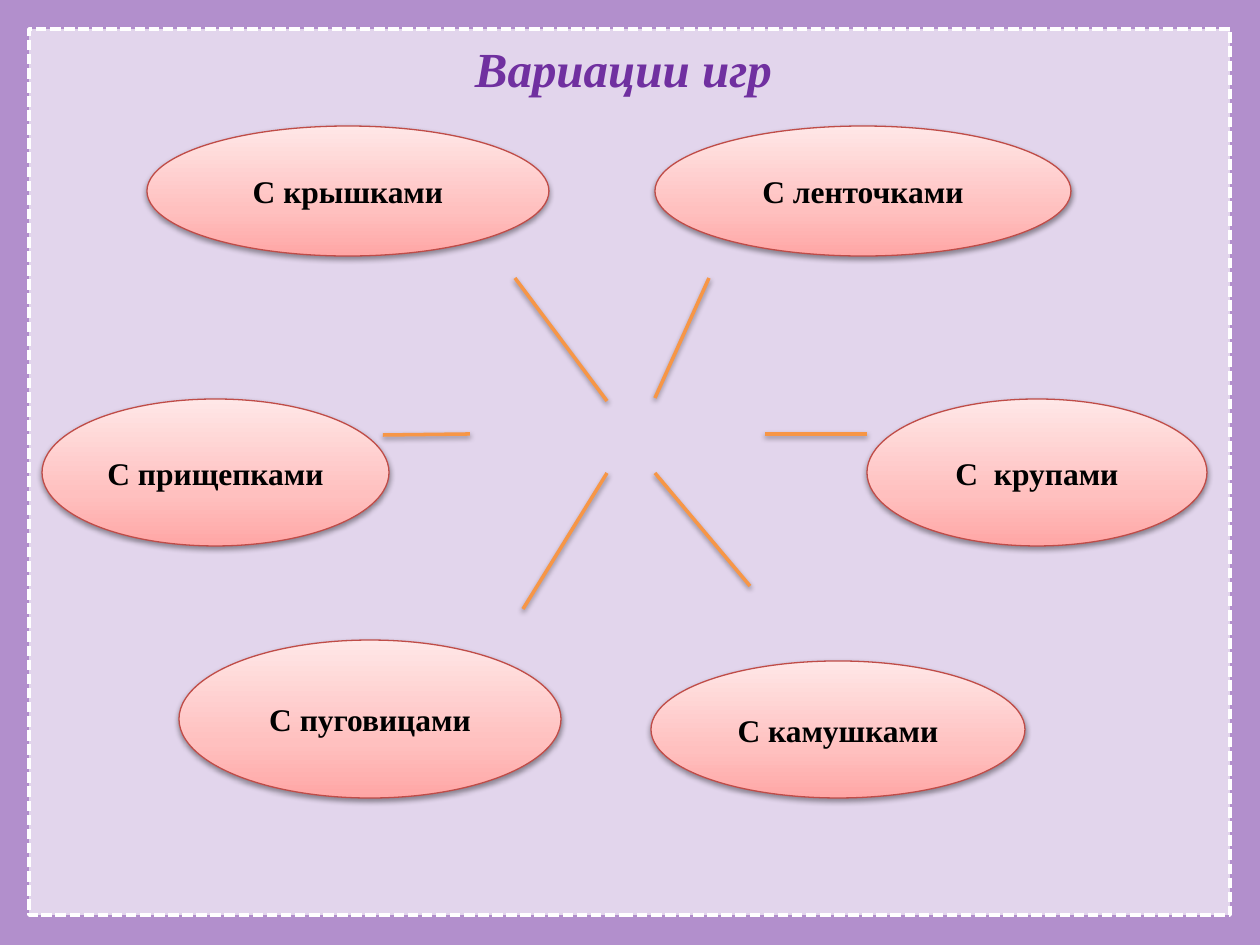
import copy

from lxml import etree
from pptx import Presentation
from pptx import util as u
from pptx.dml.color import RGBColor
from pptx.enum import dml, shapes, text
from pptx.oxml import ns

PX = 914400 / 126
FONT = "Times New Roman"

PURPLE = RGBColor(0x70, 0x30, 0xA0)
LILAC = RGBColor(0xB2, 0x8F, 0xCC)
WHITE = RGBColor(0xFF, 0xFF, 0xFF)
BLACK = RGBColor(0x00, 0x00, 0x00)
RED = RGBColor(0xBF, 0x4C, 0x48)
ORANGE = RGBColor(0xF7, 0x96, 0x46)
PINKS = (
    (0, RGBColor(0xFF, 0xA6, 0xA5)),
    (0.35, RGBColor(0xFF, 0xC0, 0xBF)),
    (1, RGBColor(0xFF, 0xE7, 0xE7)),
)

# Label, left, top, width, height
GAMES = (
    ("С крышками", 147, 126, 402, 130),
    ("С прищепками", 42, 399, 347, 147),
    ("С пуговицами", 179, 640, 382, 158),
    ("С камушками", 651, 661, 374, 137),
    ("С  крупами", 867, 399, 340, 147),
    ("С ленточками", 655, 126, 416, 130),
)

# Start x, y and end x, y
RAYS = (
    (515, 278, 607, 401),
    (655, 473, 750, 586),
    (383, 435, 470, 434),
    (765, 434, 867, 434),
    (655, 398, 709, 278),
    (607, 473, 523, 609),
)


def px(*lengths):
    return [u.Emu(round(length * PX)) for length in lengths]


def add_node(parent, tag, **attributes):
    return etree.SubElement(parent, ns.qn(tag), attributes)


def set_line(line, color, points):
    line.color.rgb = color
    line.width = u.Pt(points)


def add_shadow(shape):
    effects = add_node(shape.element.spPr, "a:effectLst")
    shadow = add_node(effects, "a:outerShdw", blurRad="39370", dist="20320",
                      dir="5400000", rotWithShape="0")
    color = add_node(shadow, "a:srgbClr", val="000000")
    add_node(color, "a:alpha", val="38000")


def set_text(shape, words, size, color, italic=False):
    frame = shape.text_frame
    frame.text = words
    frame.word_wrap = True
    frame.vertical_anchor = text.MSO_ANCHOR.MIDDLE
    para = frame.paragraphs[0]
    para.alignment = text.PP_ALIGN.CENTER
    font = para.runs[0].font
    font.name, font.size = FONT, u.Pt(size)
    font.bold, font.italic = True, italic
    font.color.rgb = color


def fill_pink(fill):
    fill.gradient()
    fill.gradient_angle = 90
    first = fill.gradient_stops[0]._gs
    first.addnext(copy.deepcopy(first))
    for stop, (position, color) in zip(fill.gradient_stops, PINKS):
        stop.position = position
        stop.color.rgb = color


def add_panel(page):
    panel = page.shapes.add_shape(shapes.MSO_SHAPE.RECTANGLE, *px(29, 29, 1201, 886))
    panel.shadow.inherit = False
    panel.fill.solid()
    panel.fill.fore_color.rgb = WHITE
    color = panel.element.spPr.find(".//" + ns.qn("a:srgbClr"))
    add_node(color, "a:alpha", val="63000")
    set_line(panel.line, WHITE, 2)
    panel.line.dash_style = dml.MSO_LINE.SQUARE_DOT
    # Send the panel behind the title
    page.shapes.element.insert(2, panel.element)


def add_title(page):
    title = page.shapes.title
    title.left, title.top, title.width, title.height = px(118, 10, 1023, 116)
    set_text(title, "Вариации игр ", 28, PURPLE, italic=True)


def add_game(page, label, *place):
    oval = page.shapes.add_shape(shapes.MSO_SHAPE.OVAL, *px(*place))
    fill_pink(oval.fill)
    set_line(oval.line, RED, 0.75)
    add_shadow(oval)
    set_text(oval, label, 18, BLACK)


def add_ray(page, *ends):
    ray = page.shapes.add_connector(shapes.MSO_CONNECTOR.STRAIGHT, *px(*ends))
    set_line(ray.line, ORANGE, 2)
    add_shadow(ray)


def main():
    deck = Presentation()
    deck.slide_width, deck.slide_height = px(1260, 945)
    page = deck.slides.add_slide(deck.slide_layouts[5])

    # Background, framed panel and title
    page.background.fill.solid()
    page.background.fill.fore_color.rgb = LILAC
    add_panel(page)
    add_title(page)

    # Games around the centre and the rays towards them
    for game in GAMES:
        add_game(page, *game)
    for ray in RAYS:
        add_ray(page, *ray)

    deck.save("out.pptx")


if __name__ == "__main__":
    main()
